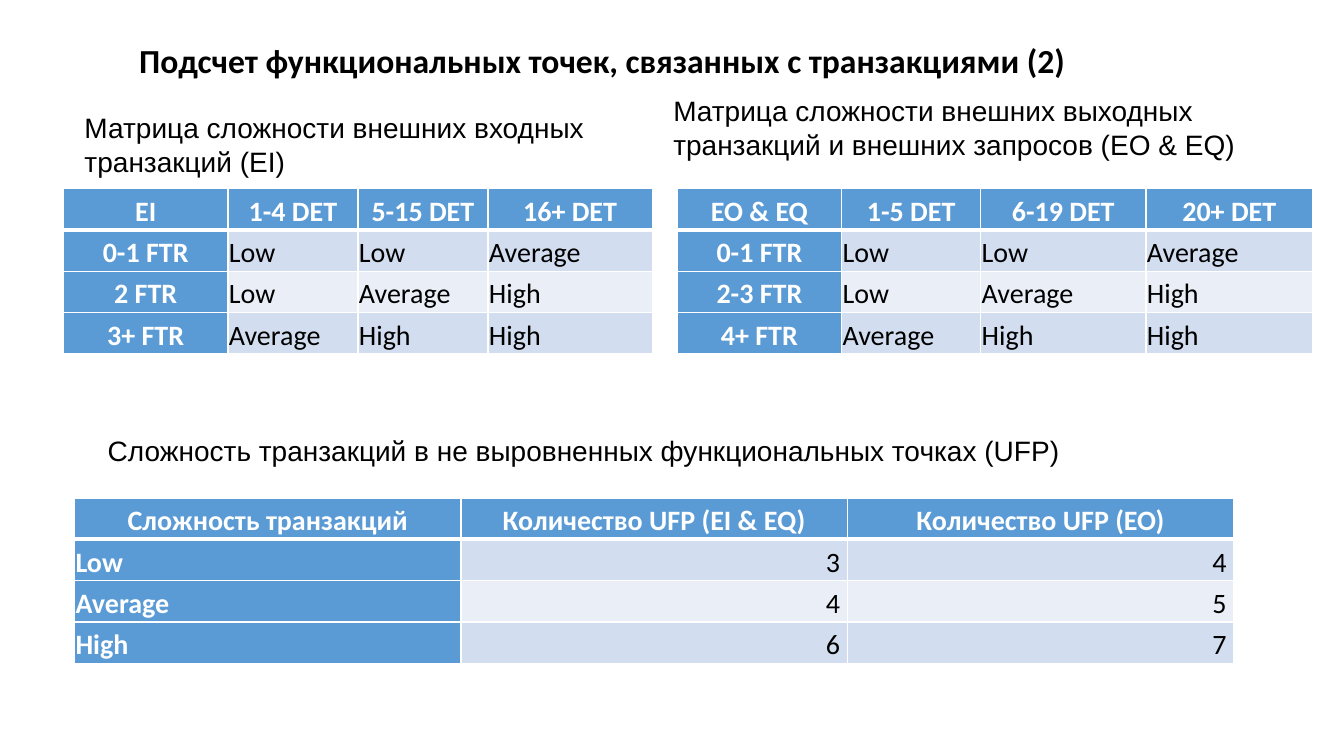
"""Build a slide with function point complexity tables for transactions."""
from lxml import etree
from pptx import Presentation
from pptx.dml.color import RGBColor
from pptx.enum.text import MSO_ANCHOR, PP_ALIGN
from pptx.oxml.ns import qn
from pptx.util import Pt

LEFT, CENTER, RIGHT = PP_ALIGN.LEFT, PP_ALIGN.CENTER, PP_ALIGN.RIGHT
JUSTIFY, TOP = PP_ALIGN.JUSTIFY, MSO_ANCHOR.TOP
WHITE = RGBColor(0xFF, 0xFF, 0xFF)
BLACK = RGBColor(0x00, 0x00, 0x00)
BLUE = RGBColor(0x5B, 0x9B, 0xD5)
BANDS = (RGBColor(0xEA, 0xEF, 0xF7), RGBColor(0xD2, 0xDE, 0xEF))

TITLE = "Подсчет функциональных точек, связанных с транзакциями (2)"
TITLE_BOX = (92.2, 25.2, 712, 36)
CAPTIONS = [
    ("Матрица сложности внешних входных транзакций (EI)", (53.3, 74.2, 480.2, 77.8), True),
    ("Матрица сложности внешних выходных транзакций и внешних запросов (EO & EQ)",
     (473.8, 61.9, 473.8, 77.8), True),
    ("Сложность транзакций в не выровненных функциональных точках (UFP)",
     (69.8, 304.6, 704.9, 53.3), False),
]
LEVELS = [["Low", "Low", "Average"], ["Low", "Average", "High"], ["Average", "High", "High"]]
TABLES = [
    {"corner": (45.4, 134.6), "widths": (117.4, 92.9, 92.9, 117.4),
     "header": ["EI", "1-4 DET", "5-15 DET", "16+ DET"],
     "labels": ["0-1 FTR", "2 FTR", "3+ FTR"], "values": LEVELS,
     "label_align": CENTER, "value_align": LEFT, "right_inset": 0.7},
    {"corner": (483.8, 134.6), "widths": (117.4, 99.4, 118, 119.2),
     "header": ["EO & EQ", "1-5 DET", "6-19 DET", "20+ DET"],
     "labels": ["0-1 FTR", "2-3 FTR", "4+ FTR"], "values": LEVELS,
     "label_align": CENTER, "value_align": LEFT, "right_inset": 0.7},
    {"corner": (53.3, 355.7), "widths": (276, 276, 276),
     "header": ["Сложность транзакций", "Количество UFP (EI & EQ)", "Количество UFP (EO)"],
     "labels": ["Low", "Average", "High"], "values": [["3", "4"], ["4", "5"], ["6", "7"]],
     "label_align": LEFT, "value_align": RIGHT, "right_inset": 5.2},
]
ROW_HEIGHT = 27.5
INSET = 0.7


def apply(target, formats):
    """Set each named attribute of the target."""
    for name, value in formats.items():
        setattr(target, name, value)


def write(frame, text, font, size, color, bold, align):
    """Write one formatted paragraph and return it."""
    para = frame.paragraphs[0]
    para.alignment = align
    span = para.add_run()
    span.text = text
    apply(span.font, {"name": font, "size": Pt(size), "bold": bold})
    span.font.color.rgb = color
    return para


def place(shape, box):
    """Move and size a shape in points."""
    apply(shape, dict(zip(("left", "top", "width", "height"), map(Pt, box))))


def add_borders(cell, widths):
    """Give a cell white borders of the given widths in points."""
    properties = cell._tc.get_or_add_tcPr()
    for side, width in widths.items():
        line = etree.SubElement(properties, qn(f"a:ln{side}"), w=str(Pt(width)))
        fill = etree.SubElement(line, qn("a:solidFill"))
        etree.SubElement(fill, qn("a:srgbClr"), val=str(WHITE))


def add_matrix(page, matrix):
    """Add one table with a blue header row and label column."""
    rows = [matrix["header"]]
    rows += [[label, *values] for label, values in zip(matrix["labels"], matrix["values"])]
    widths = matrix["widths"]
    box = (*matrix["corner"], sum(widths), ROW_HEIGHT * len(rows))
    table = page.shapes.add_table(len(rows), len(widths), *map(Pt, box)).table
    table.horz_banding = False
    for column, width in zip(table.columns, widths):
        column.width = Pt(width)
    for row, texts in enumerate(rows):
        for column, text in enumerate(texts):
            cell = table.cell(row, column)
            heading = row == 0 or column == 0
            if row == 0:
                align = CENTER
            else:
                align = matrix["label_align"] if column == 0 else matrix["value_align"]
            right = INSET if heading else matrix["right_inset"]
            apply(cell, {"margin_left": Pt(INSET), "margin_right": Pt(right),
                         "margin_top": Pt(INSET), "margin_bottom": Pt(INSET)})
            add_borders(cell, {"L": 1, "R": 1, "T": 3 if row == 1 else 1,
                               "B": 3 if row == 0 else 1})
            cell.fill.solid()
            cell.fill.fore_color.rgb = BLUE if heading else BANDS[row % 2]
            para = write(cell.text_frame, text, "Calibri", 20,
                         WHITE if heading else BLACK, heading, align)
            apply(para, {"line_spacing": 1.15, "space_after": Pt(10)})


def main():
    """Build and save the slide."""
    deck = Presentation()
    apply(deck, {"slide_width": Pt(960), "slide_height": Pt(540)})
    page = deck.slides.add_slide(deck.slide_layouts[5])
    title = page.shapes.title
    place(title, TITLE_BOX)
    title.text_frame.vertical_anchor = TOP
    write(title.text_frame, TITLE, "Calibri", 24, BLACK, True, JUSTIFY)
    for matrix in TABLES:
        add_matrix(page, matrix)
    for text, box, wrap in CAPTIONS:
        frame = page.shapes.add_textbox(*map(Pt, box)).text_frame
        apply(frame, {"word_wrap": wrap, "vertical_anchor": TOP, "margin_top": Pt(5)})
        write(frame, text, "Arial", 20, BLACK, False, LEFT)
    deck.save("out.pptx")


if __name__ == "__main__":
    main()
